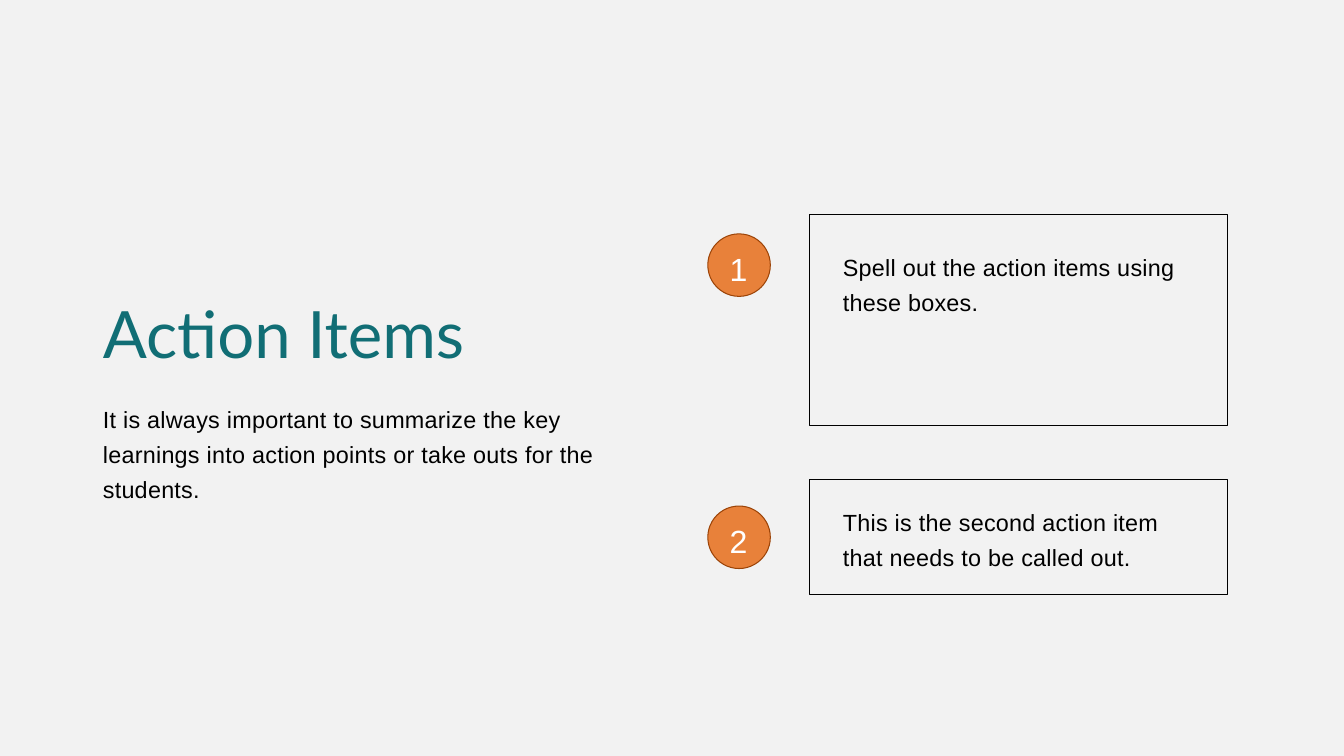
"""Build the Action Items slide with two numbered callouts."""
from dataclasses import dataclass

from pptx import Presentation
from pptx.dml.color import RGBColor
from pptx.enum.shapes import MSO_SHAPE
from pptx.enum.text import MSO_AUTO_SIZE, PP_ALIGN
from pptx.shapes.autoshape import Shape
from pptx.slide import Slide
from pptx.util import Inches, Pt

COLOURS = {
    "background": "F2F2F2",
    "black": "000000",
    "teal": "116E75",
    "orange": "E8813A",
    "rust": "9C4408",
    "white": "FFFFFF",
}
FRAME_FORMAT = {
    "margin_left": 0,
    "margin_top": 0,
    "margin_right": 0,
    "margin_bottom": 0,
    "word_wrap": True,
    "auto_size": MSO_AUTO_SIZE.SHAPE_TO_FIT_TEXT,
}


@dataclass(frozen=True)
class TextStyle:
    font: dict
    paragraph: dict
    colour: str
    tracking: int = 0


@dataclass(frozen=True)
class TextItem:
    text: str
    left: float
    top: float
    width: float
    height: float
    style: TextStyle


@dataclass(frozen=True)
class ActionItem:
    text: str
    frame_top: float
    frame_height: float
    text_top: float
    badge_top: float


TITLE = TextStyle(
    {"name": "Lato", "size": Pt(46.6)},
    {"alignment": PP_ALIGN.LEFT, "line_spacing": Pt(51.3)},
    "teal",
)
BODY = TextStyle(
    {"name": "Arial", "size": Pt(16.7)},
    {"alignment": PP_ALIGN.LEFT, "line_spacing": Pt(25)},
    "black",
    20,
)
NUMBER = TextStyle(
    {"name": "Arial", "size": Pt(22.9)},
    {"alignment": PP_ALIGN.CENTER, "line_spacing": Pt(32.1)},
    "white",
)
INTRODUCTION = [
    TextItem("Action Items", 1.02, 2.97, 5.05, 0.73, TITLE),
    TextItem(
        "It is always important to summarize the key learnings into action points "
        "or take outs for the students.",
        1.02, 3.95, 5.05, 1.02, BODY,
    ),
]
ACTIONS = [
    ActionItem("Spell out the action items using these boxes.", 2.13, 2.09, 2.44, 2.32),
    ActionItem(
        "This is the second action item that needs to be called out.",
        4.76, 1.14, 4.97, 5.02,
    ),
]


def colour(name: str) -> RGBColor:
    return RGBColor.from_string(COLOURS[name])


def apply_format(target: object, values: dict) -> None:
    for name, value in values.items():
        setattr(target, name, value)


def add_text(page: Slide, item: TextItem) -> None:
    box = page.shapes.add_textbox(
        *map(Inches, (item.left, item.top, item.width, item.height))
    )
    apply_format(box.text_frame, FRAME_FORMAT)
    para = box.text_frame.paragraphs[0]
    apply_format(para, item.style.paragraph)
    span = para.add_run()
    span.text = item.text
    apply_format(span.font, item.style.font)
    span.font.color.rgb = colour(item.style.colour)
    if item.style.tracking:
        span._r.get_or_add_rPr().set("spc", str(item.style.tracking))


def add_outline(
    page: Slide, kind: MSO_SHAPE, left: float, top: float, width: float,
    height: float, line: str, weight: float,
) -> Shape:
    shape = page.shapes.add_shape(kind, *map(Inches, (left, top, width, height)))
    shape.shadow.inherit = False
    shape.fill.background()
    shape.line.color.rgb = colour(line)
    shape.line.width = Pt(weight)
    return shape


def add_action(page: Slide, number: int, action: ActionItem) -> None:
    add_outline(
        page, MSO_SHAPE.RECTANGLE, 8.03, action.frame_top, 4.14,
        action.frame_height, "black", 0.6,
    )
    badge = add_outline(
        page, MSO_SHAPE.OVAL, 7.02, action.badge_top, 0.62, 0.62, "rust", 0.75
    )
    badge.fill.solid()
    badge.fill.fore_color.rgb = colour("orange")
    add_text(
        page, TextItem(str(number), 7.14, action.badge_top + 0.09, 0.37, 0.43, NUMBER)
    )
    add_text(page, TextItem(action.text, 8.36, action.text_top, 3.48, 0.67, BODY))


def main() -> None:
    deck = Presentation()
    deck.slide_width, deck.slide_height = Inches(13.33), Inches(7.5)
    page = deck.slides.add_slide(deck.slide_layouts[6])
    page.background.fill.solid()
    page.background.fill.fore_color.rgb = colour("background")
    for item in INTRODUCTION:
        add_text(page, item)
    for number, action in enumerate(ACTIONS, start=1):
        add_action(page, number, action)
    deck.save("out.pptx")


if __name__ == "__main__":
    main()
